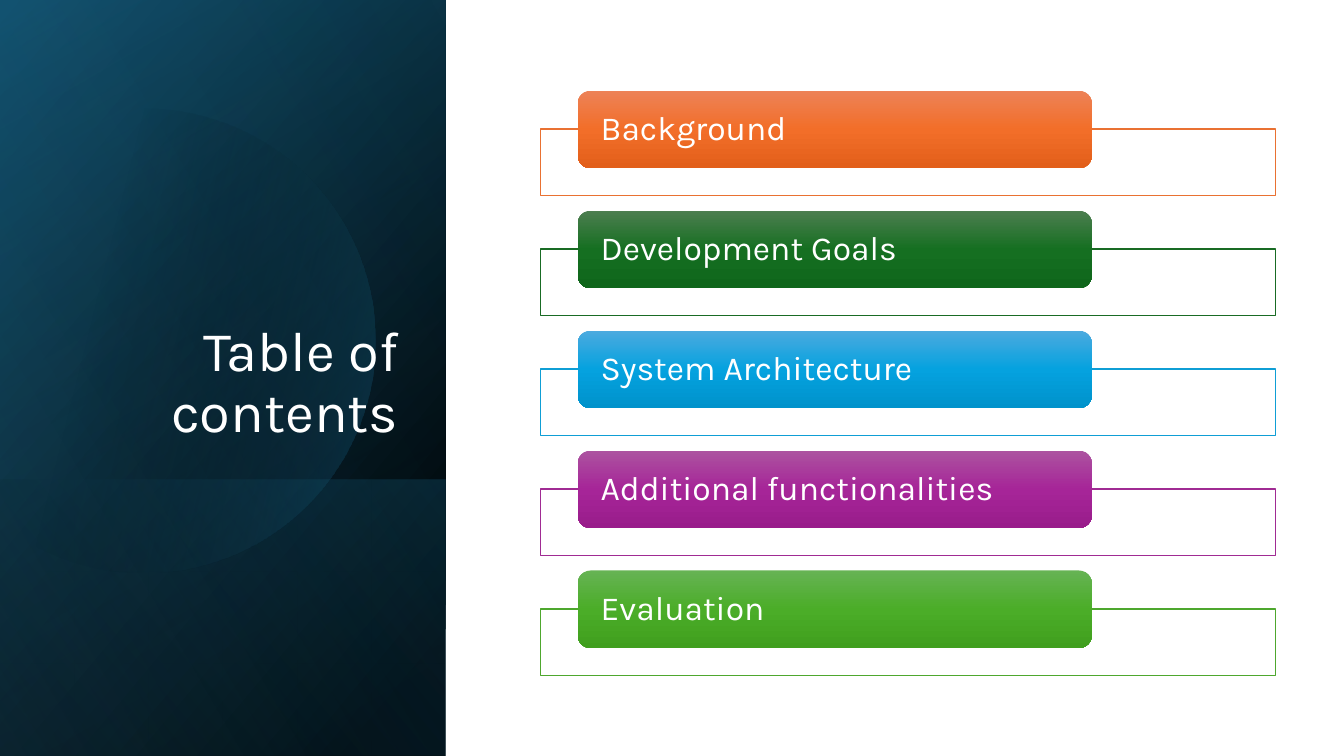
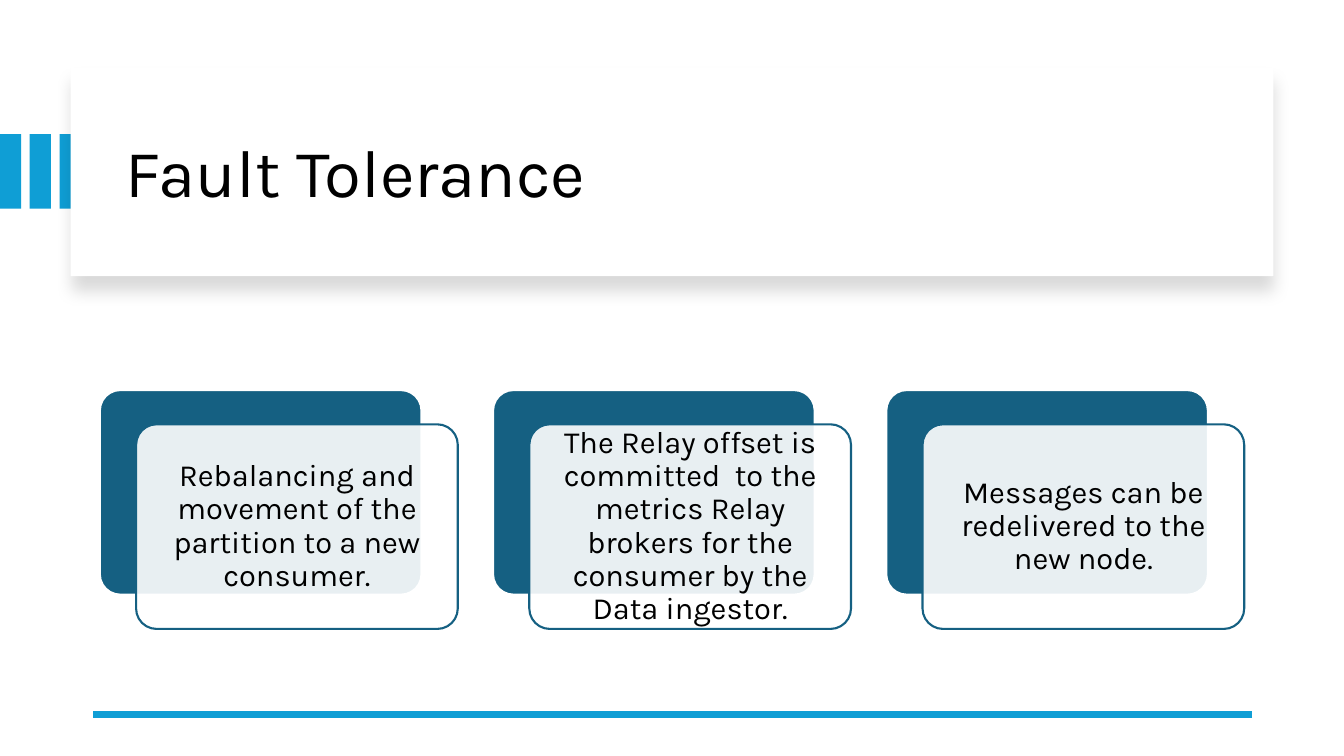
from math import cos, pi, sin

from lxml import etree
from pptx import Presentation
from pptx.dml.color import RGBColor
from pptx.enum.shapes import MSO_CONNECTOR, MSO_SHAPE
from pptx.enum.text import MSO_ANCHOR, PP_ALIGN
from pptx.oxml import parse_xml
from pptx.oxml.ns import nsdecls, qn
from pptx.util import Inches, Pt

RECT, ROUND = MSO_SHAPE.RECTANGLE, MSO_SHAPE.ROUNDED_RECTANGLE
LEFT, CENTER, RIGHT = PP_ALIGN.LEFT, PP_ALIGN.CENTER, PP_ALIGN.RIGHT
MIDDLE, BOTTOM = MSO_ANCHOR.MIDDLE, MSO_ANCHOR.BOTTOM

FONT = "Karla"
COLORS = {
    "white": "FFFFFF", "black": "000000", "blue": "0F9ED5",
    "teal": "156082", "deep": "104862", "sky": "46B1E1",
    "orange": "E97132", "green": "196B24", "purple": "A02B93", "lime": "4EA72E",
}

# label, frame colour, top / middle / bottom of the pill's gradient
TOPICS = [
    ("Background", "orange", ("ED8257", "F26E29", "E25F1A")),
    ("Development Goals", "green", ("4D7E50", "156F21", "0F661B")),
    ("System Architecture", "blue", ("4CAADF", "05A2DF", "0092CB")),
    ("Additional functionalities", "purple", ("AC53A0", "A62598", "991C8B")),
    ("Evaluation", "lime", ("66B354", "4BAD28", "409F1E")),
]
CARDS = [
    "Rebalancing and movement of the partition to a new consumer.",
    "The Relay offset is committed  to the metrics Relay brokers "
    "for the consumer by the Data ingestor.",
    "Messages can be redelivered to the new node.",
]

# top, height, angle, stops of (position, colour, opacity)
PANEL_W = 4.42
BASE = [
    (0, 7.5, 220, [(8, "black", 100), (100, "deep", 100)]),
    (0, 7.5, 240, [(0, "black", 0), (99, "teal", 46)]),
    (4.76, 2.74, 140, [(2, "teal", 29), (100, "black", 30)]),
]
GLOW = (0, 7.5, 150, [(0, "black", 0), (99, "sky", 11)])
DISC = [(29, "black", 0), (100, "teal", 43)]


def rgb(name):
    return RGBColor.from_string(COLORS[name])


def blend(shape, angle, stops):
    """Fill with a linear gradient; stop colours are names or hex."""
    marks = "".join(
        f'<a:gs pos="{pos * 1000}"><a:srgbClr val="{COLORS.get(color, color)}">'
        f'<a:alpha val="{alpha * 1000}"/></a:srgbClr></a:gs>'
        for pos, color, alpha in stops)
    shape.fill.background()
    props = shape._element.spPr
    props.replace(props.find(qn("a:noFill")), parse_xml(
        f'<a:gradFill {nsdecls("a")} rotWithShape="1"><a:gsLst>{marks}</a:gsLst>'
        f'<a:lin ang="{angle * 60000}" scaled="0"/></a:gradFill>'))


def paint(shape, fill=None, line=None, width=1, alpha=100):
    shape.shadow.inherit = False
    if fill:
        shape.fill.solid()
        shape.fill.fore_color.rgb = rgb(fill)
        if alpha < 100:
            color = shape._element.spPr.find(qn("a:solidFill"))[0]
            etree.SubElement(color, qn("a:alpha"), val=str(alpha * 1000))
    if line:
        shape.line.color.rgb = rgb(line)
        shape.line.width = Pt(width)
    else:
        shape.line.fill.background()


def add(slide, kind, x, y, w, h, **look):
    shape = slide.shapes.add_shape(kind, Inches(x), Inches(y), Inches(w), Inches(h))
    paint(shape, **look)
    return shape


def write(shape, text, size, color, align, anchor=MIDDLE):
    frame = shape.text_frame
    frame.word_wrap = True
    frame.vertical_anchor = anchor
    para = frame.paragraphs[0]
    para.alignment = align
    para.line_spacing = 0.9
    run = para.add_run()
    run.text = text
    run.font.name = FONT
    run.font.size = Pt(size)
    run.font.color.rgb = rgb(color)


def inset(shape, x, y):
    frame = shape.text_frame
    frame.margin_left = frame.margin_right = Inches(x)
    frame.margin_top = frame.margin_bottom = Inches(y)


def head(slide, box, *style):
    """Place the title above the shapes drawn so far."""
    title = slide.shapes.title
    title.left, title.top, title.width, title.height = map(Inches, box)
    write(title, *style)
    slide.shapes._spTree.append(title._element)


def panel(slide, top, high, angle, stops):
    blend(add(slide, RECT, 0, top, PANEL_W, high), angle, stops)


def disc(slide, x, y, r):
    """Draw a circle cut off at the slide's left edge."""
    turns = [2 * pi * i / 120 for i in range(120)]
    points = [(Inches(max(0, x + r * cos(t))), Inches(y + r * sin(t))) for t in turns]
    path = slide.shapes.build_freeform(*points[0])
    path.add_line_segments(points[1:])
    shape = path.convert_to_shape()
    paint(shape)
    blend(shape, 14, DISC)


def contents(slide):
    for part in BASE:
        panel(slide, *part)
    disc(slide, 1.42, 3.38, 2.3)
    panel(slide, *GLOW)
    head(slide, (0.64, 1.84, 3.41, 2.62), "Table of contents", 40, "white", RIGHT, BOTTOM)
    for i, (label, color, shades) in enumerate(TOPICS):
        y = 0.9 + 1.19 * i
        add(slide, RECT, 5.36, y + 0.38, 7.29, 0.66, fill="white", line=color, alpha=90)
        pill = add(slide, ROUND, 5.73, y, 5.1, 0.77)
        blend(pill, 90, [(50 * n, shade, 100) for n, shade in enumerate(shades)])
        inset(pill, 0.19, 0)
        write(pill, label, 24, "white", LEFT)


def faults(slide):
    for i in range(3):
        add(slide, RECT, 0.295 * i, 1.33, 0.21, 0.74, fill="blue")
    banner = add(slide, RECT, 0.7, 0.67, 11.93, 2.07, fill="white")
    banner._element.spPr.find(qn("a:effectLst")).append(parse_xml(
        f'<a:outerShdw {nsdecls("a")} blurRad="{Pt(11)}" dist="{Pt(10)}" dir="5400000" '
        f'algn="t" rotWithShape="0"><a:srgbClr val="{COLORS["black"]}">'
        '<a:alpha val="15000"/></a:srgbClr></a:outerShdw>'))
    head(slide, (1.14, 0.89, 11.13, 1.7), "Fault Tolerance", 48, "black", LEFT)
    rule = slide.shapes.add_connector(
        MSO_CONNECTOR.STRAIGHT, Inches(12.42), Inches(7.09), Inches(0.92), Inches(7.09))
    rule.line.color.rgb = rgb("blue")
    rule.line.width = Pt(4.5)
    etree.SubElement(rule._element.spPr, qn("a:effectLst"))
    for i, text in enumerate(CARDS):
        x = 0.99 + 3.9 * i
        back = add(slide, ROUND, x, 3.87, 3.19, 2.03, fill="teal", line="white", width=1.5)
        card = add(slide, ROUND, x + 0.36, 4.21, 3.19, 2.03,
                   fill="white", line="teal", width=1.5, alpha=90)
        back.adjustments[0] = card.adjustments[0] = 0.1
        inset(card, 0.09, 0.09)
        write(card, text, 22, "black", CENTER)


def main():
    deck = Presentation()
    deck.slide_width, deck.slide_height = Inches(13.33), Inches(7.5)
    for build in (contents, faults):
        build(deck.slides.add_slide(deck.slide_layouts[5]))
    deck.save("out.pptx")


if __name__ == "__main__":
    main()
